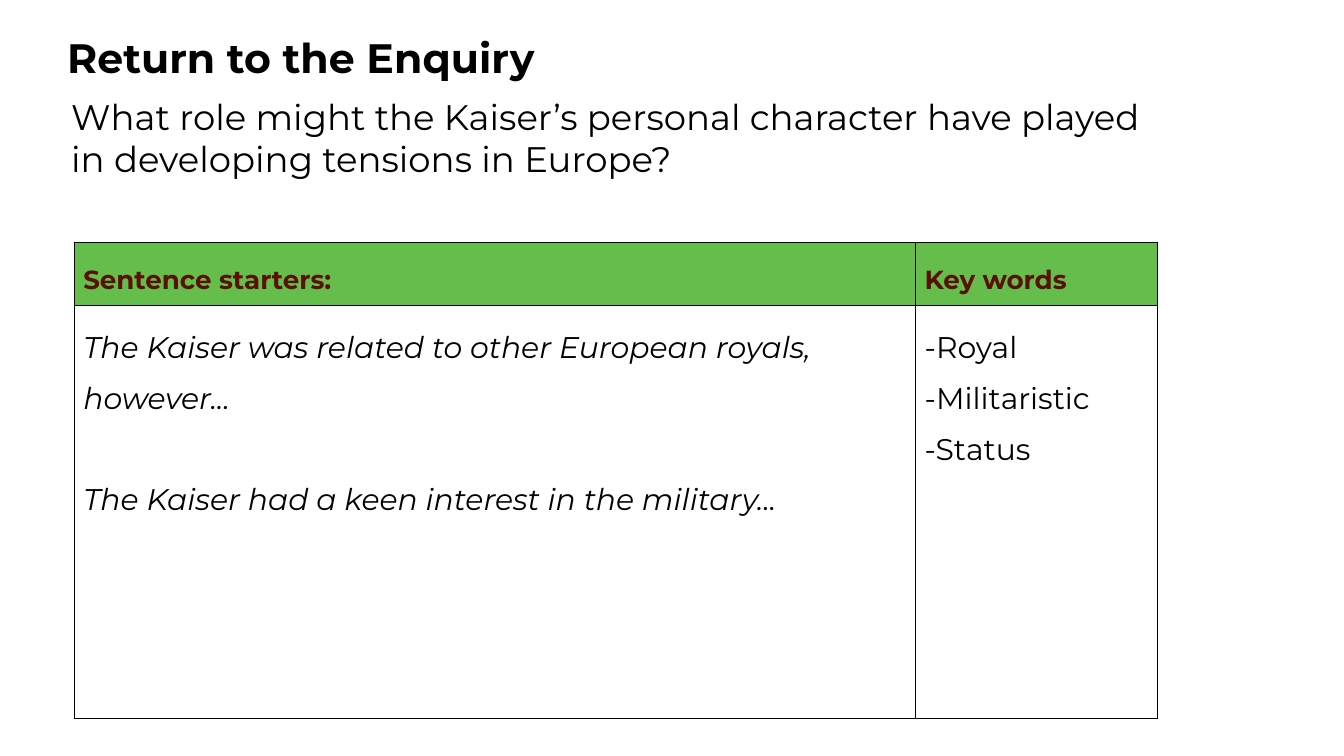
"""Build the enquiry slide with its sentence starters and key words table."""
from lxml.etree import SubElement
from pptx import Presentation
from pptx.dml.color import RGBColor
from pptx.enum.text import MSO_ANCHOR, MSO_AUTO_SIZE, PP_ALIGN
from pptx.oxml.ns import qn
from pptx.util import Inches, Pt

BLACK = RGBColor(0x00, 0x00, 0x00)
MAROON = RGBColor(0x5B, 0x0F, 0x00)
GREEN = RGBColor(0x65, 0xBE, 0x4B)

TITLE = "Return to the Enquiry"
QUESTION = ("What role might the Kaiser’s personal character have played "
            "in developing tensions in Europe?")
HEADINGS = ["Sentence starters:", "Key words"]
STARTERS = ["The Kaiser was related to other European royals, however...",
            "The Kaiser had a keen interest in the military..."]
KEY_WORDS = ["-Royal", "-Militaristic", "-Status"]

TITLE_FONT = {"size": Pt(44), "bold": True}
QUESTION_FONT = {"size": Pt(38), "bold": False}
HEADING_FONT = {"size": Pt(28), "bold": True}
STARTER_FONT = {"size": Pt(32), "bold": False, "italic": True}
KEY_WORD_FONT = {"size": Pt(32), "bold": False, "italic": False}

COLUMN_WIDTHS = [12.52, 3.6]
ROW_HEIGHTS = [0.94, 6.15]
STARTER_GAP = 54.6


def write(frame, lines, font, color=BLACK, spacing=1.0, gap=0):
    for index, line in enumerate(lines):
        para = frame.paragraphs[0] if index == 0 else frame.add_paragraph()
        para.alignment = PP_ALIGN.LEFT
        para.line_spacing = spacing
        para.space_before = Pt(gap if index else 0)
        span = para.add_run()
        span.text = line
        span.font.name = "Montserrat"
        span.font.color.rgb = color
        for name, value in font.items():
            setattr(span.font, name, value)


def set_up_frame(frame, inset):
    frame.word_wrap = True
    frame.auto_size = MSO_AUTO_SIZE.NONE
    frame.vertical_anchor = MSO_ANCHOR.TOP
    set_margins(frame, inset)


def set_margins(holder, inset):
    for side in ("left", "top", "right", "bottom"):
        setattr(holder, f"margin_{side}", Inches(inset))


def style_cell(cell, fill):
    set_margins(cell, 0.14)
    cell.vertical_anchor = MSO_ANCHOR.TOP
    properties = cell._tc.get_or_add_tcPr()
    for edge in ("a:lnL", "a:lnR", "a:lnT", "a:lnB"):
        line = SubElement(properties, qn(edge), w=str(Pt(1)))
        color = SubElement(SubElement(line, qn("a:solidFill")), qn("a:srgbClr"))
        color.set("val", str(BLACK))
    if fill is None:
        cell.fill.background()
    else:
        cell.fill.solid()
        cell.fill.fore_color.rgb = fill


def add_writing_table(page):
    size = (Inches(sum(COLUMN_WIDTHS)), Inches(sum(ROW_HEIGHTS)))
    table = page.shapes.add_table(2, 2, Inches(1.1), Inches(3.6), *size).table
    table.first_row = table.horz_banding = False
    for column, width in zip(table.columns, COLUMN_WIDTHS):
        column.width = Inches(width)
    for row, height, fill in zip(table.rows, ROW_HEIGHTS, [GREEN, None]):
        row.height = Inches(height)
        for cell in row.cells:
            style_cell(cell, fill)
    for index, heading in enumerate(HEADINGS):
        write(table.cell(0, index).text_frame, [heading], HEADING_FONT, MAROON, 1.4)
    write(table.cell(1, 0).text_frame, STARTERS, STARTER_FONT,
          spacing=1.4, gap=STARTER_GAP)
    write(table.cell(1, 1).text_frame, KEY_WORDS, KEY_WORD_FONT, spacing=1.4)


def main():
    deck = Presentation()
    deck.slide_width, deck.slide_height = Inches(20), Inches(11.25)
    page = deck.slides.add_slide(deck.slide_layouts[5])

    title = page.shapes.title
    title.left, title.top = Inches(1), Inches(0.37)
    title.width, title.height = Inches(17.99), Inches(1.78)
    set_up_frame(title.text_frame, 0)
    write(title.text_frame, [TITLE], TITLE_FONT, spacing=1.15)

    box = page.shapes.add_textbox(Inches(0.86), Inches(1.21), Inches(16.37), Inches(1.93))
    set_up_frame(box.text_frame, 0.2)
    write(box.text_frame, [QUESTION], QUESTION_FONT)

    add_writing_table(page)
    deck.save("out.pptx")


if __name__ == "__main__":
    main()
